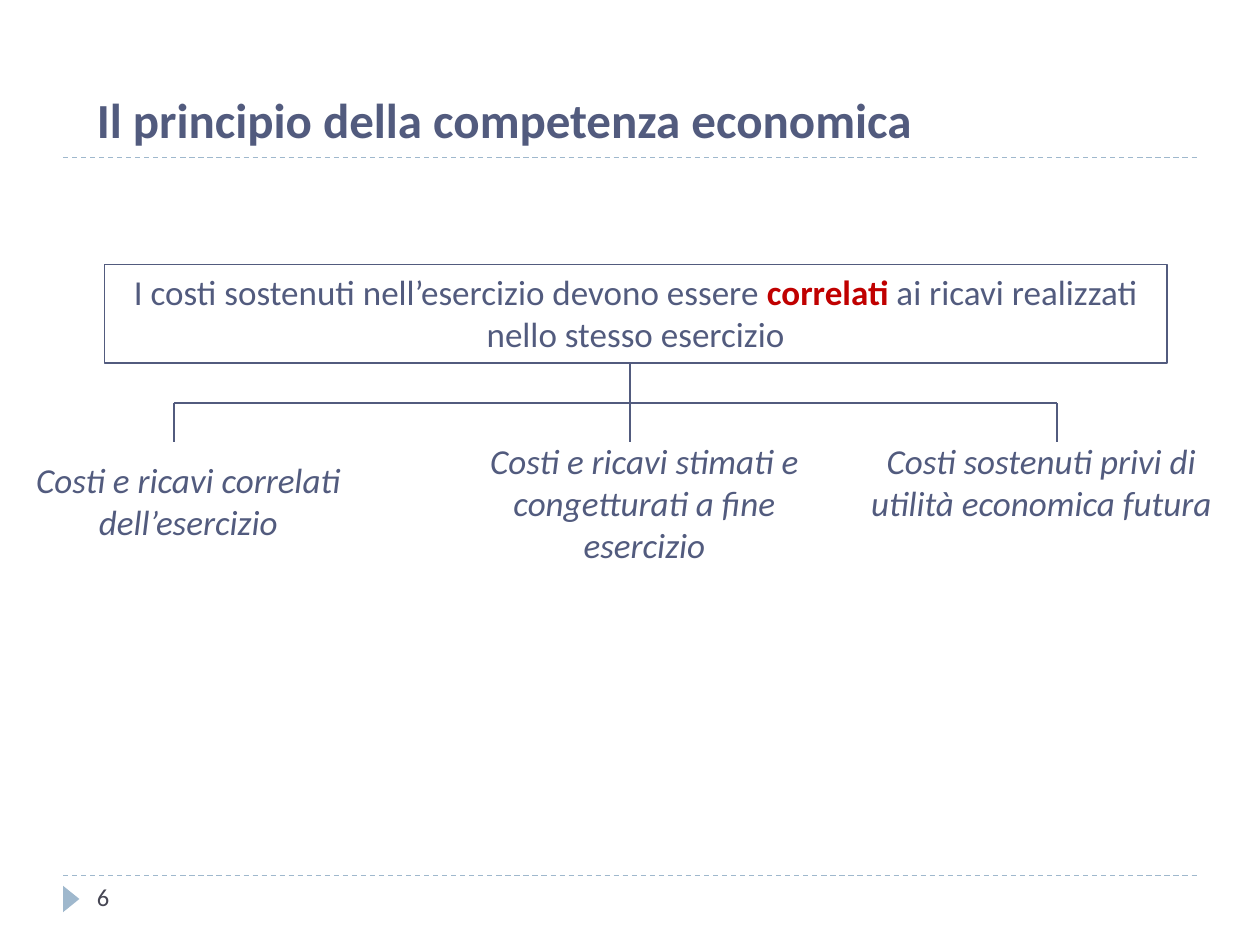
from dataclasses import dataclass

from lxml import etree
from pptx import Presentation
from pptx.dml.color import RGBColor
from pptx.enum import dml, shapes, text
from pptx.oxml import ns
from pptx.util import Pt


@dataclass(frozen=True)
class Theme:
    font: str = "Calibri"
    ink: str = "525B7E"
    accent: str = "C00000"
    rule: str = "9FB8CD"
    number: str = "464653"
    title_size: float = 28
    body_size: float = 20
    number_size: float = 14


THEME = Theme()
MARGIN, RIGHT = 36, 684
STEM_X, STEM_TOP, BRANCH_Y, BRANCH_END = 360, 207.36, 230.4, 252.72
LEFT_X, RIGHT_X = 99.36, 604.08
BRANCH_WIDTH = 232.56


def add_line(s, x1, y1, x2, y2, color=THEME.ink, width=1, dash=None):
    c = s.shapes.add_connector(
        shapes.MSO_CONNECTOR.STRAIGHT, Pt(x1), Pt(y1), Pt(x2), Pt(y2))
    c.line.color.rgb = RGBColor.from_string(color)
    c.line.width = Pt(width)
    if dash:
        c.line.dash_style = dash
    etree.SubElement(c._element.spPr, ns.qn("a:effectLst"))
    return c


def add_run(p, content, size, color=THEME.ink, bold=False, italic=False):
    r = p.add_run()
    r.text = content
    r.font.name = THEME.font
    r.font.size = Pt(size)
    r.font.color.rgb = RGBColor.from_string(color)
    r.font.bold = bold
    r.font.italic = italic


def start_text(sp, align=text.PP_ALIGN.LEFT):
    tf = sp.text_frame
    tf.word_wrap = True
    tf.vertical_anchor = text.MSO_ANCHOR.TOP
    p = tf.paragraphs[0]
    p.alignment = align
    return p


def add_label(s, x, y, w, h, content, size, align=text.PP_ALIGN.LEFT, **style):
    sp = s.shapes.add_textbox(Pt(x), Pt(y), Pt(w), Pt(h))
    add_run(start_text(sp, align), content, size, **style)


def add_box(s, x, y, w, h, runs):
    sp = s.shapes.add_shape(
        shapes.MSO_SHAPE.RECTANGLE, Pt(x), Pt(y), Pt(w), Pt(h))
    sp.shadow.inherit = False
    sp.fill.background()
    sp.line.color.rgb = RGBColor.from_string(THEME.ink)
    sp.line.width = Pt(1)
    p = start_text(sp, text.PP_ALIGN.CENTER)
    for content, style in runs:
        add_run(p, content, THEME.body_size, **style)


def add_marker(s, x, y, w, h):
    sp = s.shapes.add_shape(
        shapes.MSO_SHAPE.ISOSCELES_TRIANGLE, Pt(x), Pt(y), Pt(w), Pt(h))
    sp.rotation = 90
    sp.shadow.inherit = False
    sp.fill.solid()
    sp.fill.fore_color.rgb = RGBColor.from_string(THEME.rule)
    sp.line.fill.background()


def add_tree(s):
    add_line(s, STEM_X, STEM_TOP, STEM_X, BRANCH_Y)
    add_line(s, LEFT_X, BRANCH_Y, RIGHT_X, BRANCH_Y)
    for x in (LEFT_X, STEM_X, RIGHT_X):
        add_line(s, x, BRANCH_Y, x, BRANCH_END)
    branches = [
        (-8.64, 258.48, 55.44, "Costi e ricavi correlati dell’esercizio"),
        (252, 247.68, 79.2,
         "Costi e ricavi stimati e congetturati a fine esercizio"),
        (478.8, 247.68, 55.44,
         "Costi sostenuti privi di utilità economica futura"),
    ]
    for x, y, h, content in branches:
        add_label(s, x, y, BRANCH_WIDTH, h, content, THEME.body_size,
                  text.PP_ALIGN.CENTER, italic=True)


def main():
    prs = Presentation()
    prs.slide_width, prs.slide_height = Pt(720), Pt(540)
    s = prs.slides.add_slide(prs.slide_layouts[6])
    for y in (500.4, 90):
        add_line(s, MARGIN, y, RIGHT, y, THEME.rule, 0.75,
                 dml.MSO_LINE.DASH)
    add_marker(s, 33.12, 509.04, 15.12, 9.36)
    add_label(s, 48.24, 47.52, 641.52, 41.04,
              "Il principio della competenza economica",
              THEME.title_size, bold=True)
    add_box(s, 59.76, 151.2, 606.96, 56.16, [
        ("I costi sostenuti nell’esercizio devono essere ", {}),
        ("correlati", {"color": THEME.accent, "bold": True}),
        (" ai ricavi realizzati nello stesso esercizio", {}),
    ])
    add_tree(s)
    add_label(s, 48.24, 500.4, 156.24, 28.8, "6", THEME.number_size,
              color=THEME.number)
    prs.save("out.pptx")


if __name__ == "__main__":
    main()
